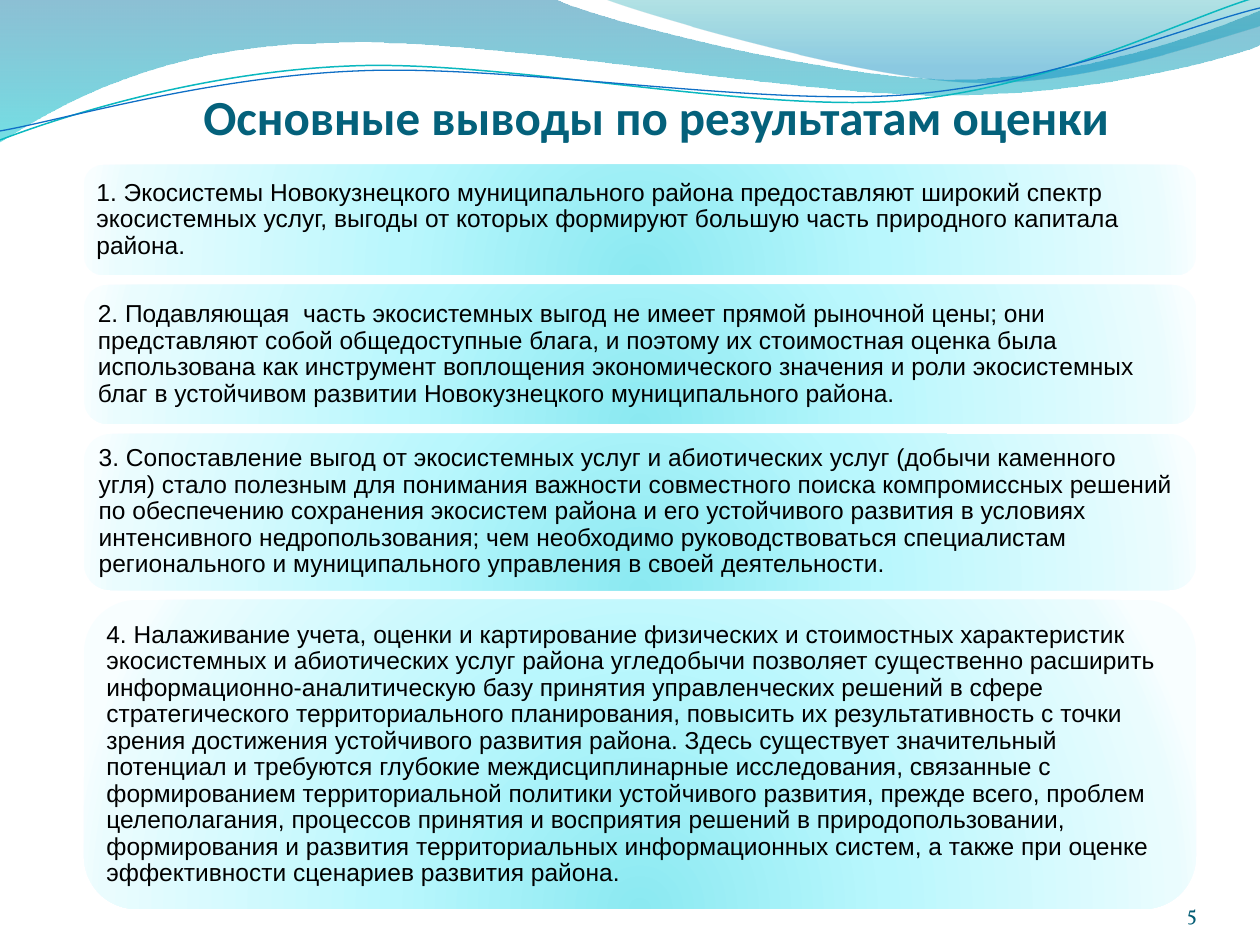
"""Build the slide with the main conclusions of the assessment."""
import pptx
import pptx.dml.color
import pptx.enum.shapes
import pptx.enum.text
import pptx.oxml
import pptx.oxml.ns
import pptx.util

SCALE = 914400 / 126
INK = {"title": "04617B", "page": "045D75", "text": "000000",
       "teal": "0AB8BF", "blue": "0F6FC6"}
SPACE = pptx.oxml.ns.nsdecls("a")
CARD = [(0, "8BE9F1", 100), (43, "B9F7FD", 100), (93, "EAFCFE", 100), (100, "F8FEFF", 100)]
GLOW = ('<a:path path="circle"><a:fillToRect l="50000" t="130000" '
        'r="50000" b="-30000"/></a:path>')
DOWN = '<a:lin ang="5400000" scaled="0"/>'
BANDS = [
    ([(0, 0), (554, -1), (600, 21, 837, 79, 955, 79), (1075, 79, 1207, 33, 1260, 11),
      (1261, 45), (1239, 55, 1096, 96, 940, 95), (784, 95, 481, 35, 324, 43),
      (163, 45, 58, 105, -1, 142)],
     [(0, "0074A1", 45), (100, "00C6CF", 55)]),
    ([(604, -1), (641, 14, 859, 78, 969, 82), (1079, 87, 1211, 40, 1260, 26), (1260, 0)],
     [(0, "00A1A9", 30), (80, "008BBF", 45)]),
]
WAVES = [
    ([(0, 140), (60, 117, 199, 72, 349, 66), (498, 59, 747, 112, 898, 101),
      (1050, 89, 1182, 19, 1257, -3)], "teal", 0.85),
    ([(0, 131), (59, 121, 207, 77, 357, 71), (508, 64, 752, 106, 903, 95),
      (1053, 84, 1185, 26, 1260, 8)], "blue", 0.75),
]
NOTES = [
    (110, "1. Экосистемы Новокузнецкого муниципального района предоставляют широкий "
     "спектр экосистемных услуг, выгоды от которых формируют большую часть природного "
     "капитала района."),
    (139, "2. Подавляющая  часть экосистемных выгод не имеет прямой рыночной цены; они "
     "представляют собой общедоступные блага, и поэтому их стоимостная оценка была "
     "использована как инструмент воплощения экономического значения и роли "
     "экосистемных благ в устойчивом развитии Новокузнецкого муниципального района."),
    (156, "3. Сопоставление выгод от экосистемных услуг и абиотических услуг (добычи "
     "каменного угля) стало полезным для понимания важности совместного поиска "
     "компромиссных решений по обеспечению сохранения экосистем района и его "
     "устойчивого развития в условиях интенсивного недропользования; чем необходимо "
     "руководствоваться специалистам регионального и муниципального управления в "
     "своей деятельности."),
    (309, "4. Налаживание учета, оценки и картирование физических и стоимостных "
     "характеристик экосистемных и абиотических услуг района угледобычи позволяет "
     "существенно расширить информационно-аналитическую базу принятия управленческих "
     "решений в сфере стратегического территориального планирования, повысить их "
     "результативность с точки зрения достижения устойчивого развития района. Здесь "
     "существует значительный потенциал и требуются глубокие междисциплинарные "
     "исследования, связанные с формированием территориальной политики устойчивого "
     "развития, прежде всего, проблем целеполагания, процессов принятия и восприятия "
     "решений в природопользовании, формирования и развития территориальных "
     "информационных систем, а также при оценке эффективности сценариев развития "
     "района."),
]


def px(num):
    """Turn pixels into EMU."""
    return pptx.util.Emu(round(num * SCALE))


def tint(name):
    """Return the named colour."""
    return pptx.dml.color.RGBColor.from_string(INK[name])


def put(item, vals):
    """Set each attribute of an item from a dict."""
    for key, val in vals.items():
        setattr(item, key, val)


def shade(shape, stops, way):
    """Fill a shape with a gradient and drop its line."""
    marks = "".join(
        f'<a:gs pos="{pos * 1000}"><a:srgbClr val="{hue}">'
        f'<a:alpha val="{full * 1000}"/></a:srgbClr></a:gs>' for pos, hue, full in stops)
    grad = pptx.oxml.parse_xml(
        f'<a:gradFill {SPACE} rotWithShape="1"><a:gsLst>{marks}</a:gsLst>{way}</a:gradFill>')
    shape.fill.background()
    props = shape._element.spPr
    props.replace(props.find(pptx.oxml.ns.qn("a:noFill")), grad)
    shape.line.fill.background()


def curve(slide, steps, close):
    """Draw a freeform and bend its six-number steps into cubic curves."""
    ends = [(px(step[-2]), px(step[-1])) for step in steps]
    pen = slide.shapes.build_freeform(*ends[0], scale=1.0)
    pen.add_line_segments(ends[1:], close=close)
    shape = pen.convert_to_shape()
    shape.shadow.inherit = False
    lines = list(shape._element.iter(pptx.oxml.ns.qn("a:lnTo")))
    for line, step in zip(lines, steps[1:]):
        if len(step) == 6:
            dots = "".join(
                f'<a:pt x="{px(x) - shape.left}" y="{px(y) - shape.top}"/>'
                for x, y in zip(step[::2], step[1::2]))
            bend = pptx.oxml.parse_xml(f"<a:cubicBezTo {SPACE}>{dots}</a:cubicBezTo>")
            line.getparent().replace(line, bend)
    return shape


def wave(slide, steps, hue, width):
    """Draw a thin wavy line."""
    shape = curve(slide, steps, False)
    shape.fill.background()
    shape.line.color.rgb = tint(hue)
    shape.line.width = pptx.util.Pt(width)


def write(shape, text, font, hue, inset, anchor, para):
    """Write one paragraph into a shape."""
    frame = shape.text_frame
    sides = ("margin_left", "margin_top", "margin_right", "margin_bottom")
    put(frame, dict(zip(sides, map(px, inset))))
    put(frame, {"word_wrap": True, "vertical_anchor": anchor})
    line = frame.paragraphs[0]
    put(line, para)
    run = line.add_run()
    run.text = text
    put(run.font, font)
    run.font.color.rgb = tint(hue)


def label(slide, box, text, font, hue, inset, align):
    """Add a text box set on its lower edge."""
    shape = slide.shapes.add_textbox(*map(px, box))
    write(shape, text, font, hue, inset, pptx.enum.text.MSO_ANCHOR.BOTTOM,
          {"alignment": align})


def card(slide, top, high, text):
    """Add a rounded card with a conclusion."""
    kind = pptx.enum.shapes.MSO_SHAPE.ROUNDED_RECTANGLE
    shape = slide.shapes.add_shape(kind, *map(px, (84, top, 1112, high)))
    shape.shadow.inherit = False
    shape.adjustments[0] = 0.17
    shade(shape, CARD, GLOW)
    write(shape, text, {"name": "Arial", "size": pptx.util.Pt(14)}, "text", (7, 7, 10, 7),
          pptx.enum.text.MSO_ANCHOR.MIDDLE,
          {"alignment": pptx.enum.text.PP_ALIGN.LEFT, "line_spacing": 0.9})


def main():
    """Build and save the slide."""
    deck = pptx.Presentation()
    put(deck, {"slide_width": px(1260), "slide_height": px(945)})
    slide = deck.slides.add_slide(deck.slide_layouts[6])
    for steps, stops in BANDS:
        shade(curve(slide, steps, True), stops, DOWN)
    for steps, hue, width in WAVES:
        wave(slide, steps, hue, width)
    align = pptx.enum.text.PP_ALIGN
    label(slide, (84, 76, 1144, 69), "Основные выводы по результатам оценки",
          {"name": "Calibri", "size": pptx.util.Pt(28), "bold": True},
          "title", (0, 6, 0, 0), align.CENTER)
    label(slide, (1092, 876, 105, 50), "5",
          {"name": "Vollkorn", "size": pptx.util.Pt(12)},
          "page", (0, 0, 0, 0), align.RIGHT)
    top = 165
    for high, text in NOTES:
        card(slide, top, high, text)
        top += high + 10
    deck.save("out.pptx")


if __name__ == "__main__":
    main()
